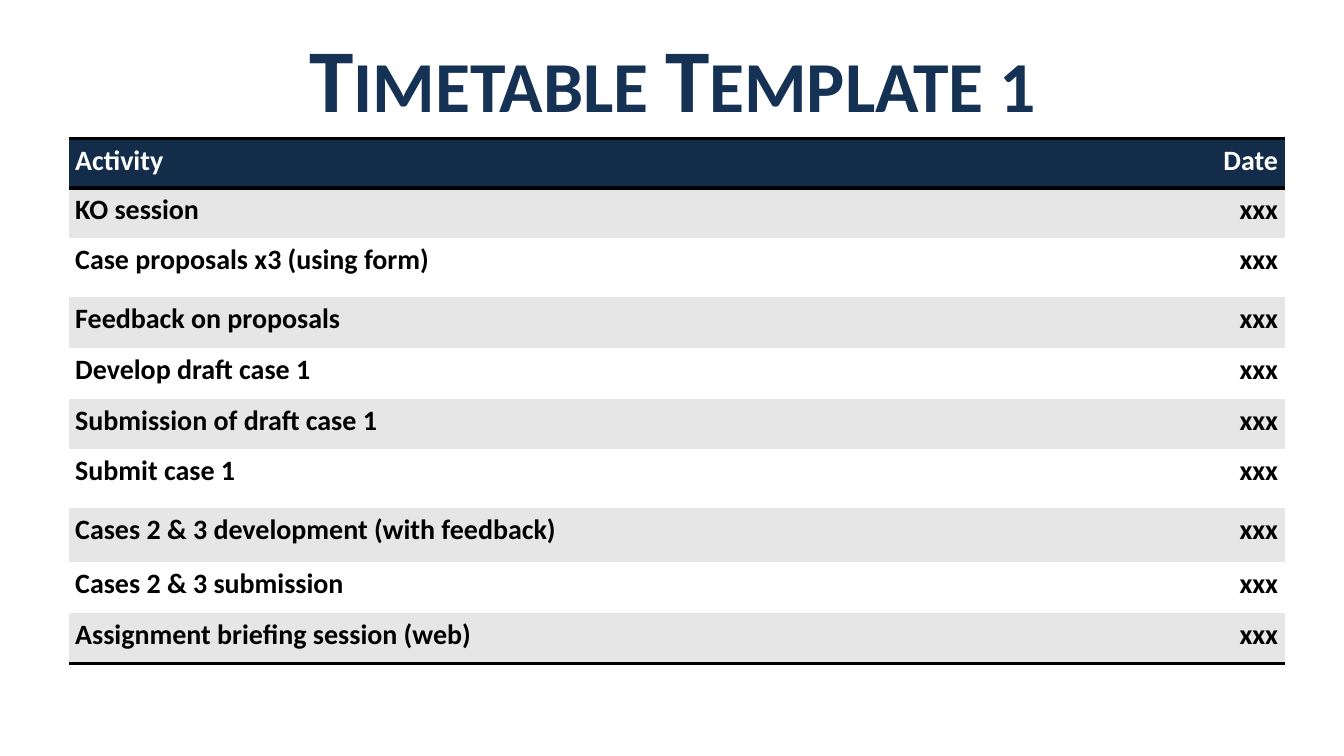
import dataclasses

import pptx
import pptx.dml.color
import pptx.enum.text
import pptx.oxml.ns
import pptx.util
from lxml import etree

Inches = pptx.util.Inches
Pt = pptx.util.Pt
Align = pptx.enum.text.PP_ALIGN
Anchor = pptx.enum.text.MSO_ANCHOR
qn = pptx.oxml.ns.qn


@dataclasses.dataclass(frozen=True)
class Theme:
    font: str = "Calibri"
    title_color: str = "153154"
    header_fill: str = "122C4A"
    header_text: str = "FFFFFF"
    body_text: str = "000000"
    band_fills: tuple = ("E6E6E6", "FFFFFF")
    rule_color: str = "000000"
    rule_width: int = 2
    title_size: int = 48
    table_size: int = 15


theme = Theme()
NO_GRID_STYLE = "{2D5ABB26-0587-4C30-8999-92F81FD0307C}"


def add_run(paragraph, text, size, color):
    run = paragraph.add_run()
    run.text = text
    run.font.name = theme.font
    run.font.size = Pt(size)
    run.font.bold = True
    run.font.color.rgb = pptx.dml.color.RGBColor.from_string(color)
    return run


def add_rule(cell, edge):
    properties = cell._tc.get_or_add_tcPr()
    line = etree.SubElement(properties, qn(f"a:{edge}"), w=str(Pt(theme.rule_width)))
    fill = etree.SubElement(line, qn("a:solidFill"))
    etree.SubElement(fill, qn("a:srgbClr"), val=theme.rule_color)


presentation = pptx.Presentation()
presentation.slide_width = Inches(10)
presentation.slide_height = Inches(10 * 9 / 16)
slide = presentation.slides.add_slide(presentation.slide_layouts[5])

title = slide.shapes.title
title.left, title.top = Inches(0.51), Inches(0.1)
title.width, title.height = Inches(8.99), Inches(0.94)
title.text_frame.word_wrap = True
title.text_frame.vertical_anchor = Anchor.MIDDLE
title_paragraph = title.text_frame.paragraphs[0]
title_paragraph.alignment = Align.CENTER
title_run = add_run(title_paragraph, "Timetable Template 1", theme.title_size, theme.title_color)
title_run.font._element.set("cap", "small")

activities = [
    ("KO session", 0.37),
    ("Case proposals x3 (using form)", 0.44),
    ("Feedback on proposals", 0.38),
    ("Develop draft case 1", 0.38),
    ("Submission of draft case 1", 0.37),
    ("Submit case 1", 0.44),
    ("Cases 2 & 3 development (with feedback)", 0.4),
    ("Cases 2 & 3 submission", 0.38),
    ("Assignment briefing session (web)", 0.38),
]
rows = [("Activity", "Date", 0.37)] + [(activity, "xxx", height) for activity, height in activities]
column_widths = (5.92, 3.13)
alignments = (Align.LEFT, Align.RIGHT)

table_frame = slide.shapes.add_table(
    len(rows), len(column_widths), Inches(0.51), Inches(1.03),
    Inches(sum(column_widths)), Inches(sum(row[-1] for row in rows)),
)
table = table_frame.table
table._tbl.tblPr.find(qn("a:tableStyleId")).text = NO_GRID_STYLE
for column, width in zip(table.columns, column_widths):
    column.width = Inches(width)

for row_index, (activity, date, height) in enumerate(rows):
    table.rows[row_index].height = Inches(height)
    is_header = row_index == 0
    fill_color = theme.header_fill if is_header else theme.band_fills[(row_index - 1) % 2]
    text_color = theme.header_text if is_header else theme.body_text
    for column_index, text in enumerate((activity, date)):
        cell = table.cell(row_index, column_index)
        cell.margin_left = cell.margin_right = Inches(0.05)
        cell.margin_top = cell.margin_bottom = Inches(0)
        cell.vertical_anchor = Anchor.TOP
        if is_header:
            add_rule(cell, "lnT")
        if row_index in (0, len(rows) - 1):
            add_rule(cell, "lnB")
        cell.fill.solid()
        cell.fill.fore_color.rgb = pptx.dml.color.RGBColor.from_string(fill_color)
        paragraph = cell.text_frame.paragraphs[0]
        paragraph.alignment = alignments[column_index]
        paragraph.line_spacing = 1.15
        add_run(paragraph, text, theme.table_size, text_color)

presentation.save("out.pptx")
